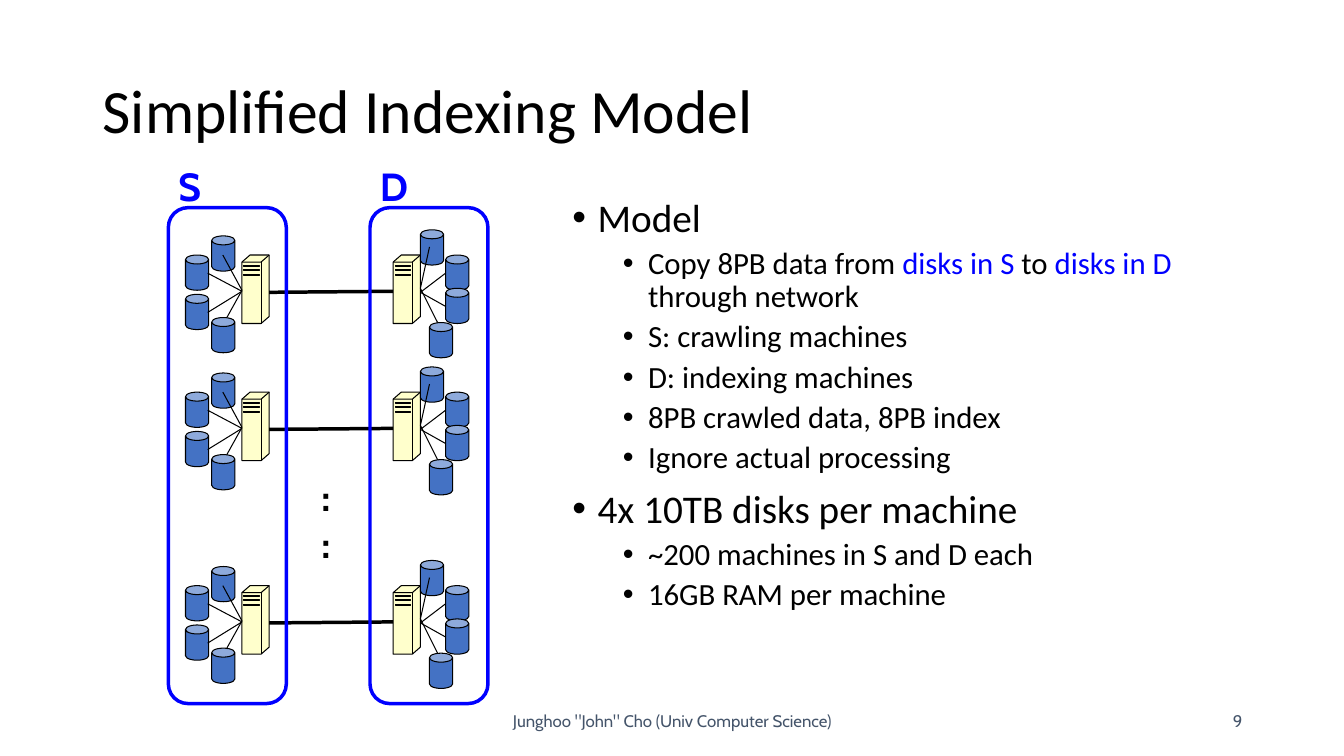
"""Build the slide on the simplified indexing model."""
from lxml.etree import SubElement
from pptx import Presentation
from pptx.dml.color import RGBColor
from pptx.enum.shapes import MSO_CONNECTOR, MSO_SHAPE
from pptx.enum.text import MSO_ANCHOR, PP_ALIGN
from pptx.oxml.ns import qn
from pptx.util import Inches, Pt

COLORS = {"text": "000000", "accent": "0000FF", "footer": "44546A",
          "disk": "4472C4", "server": "FFFFCC"}

TITLE = "Simplified Indexing Model"
FOOTER = 'Junghoo "John" Cho (Univ Computer Science)'
PAGE = "9"
OUTLINE = [
    (0, [("Model", "text")]),
    (1, [("Copy 8PB data from ", "text"), ("disks in S", "accent"), (" to ", "text"),
         ("disks in D", "accent"), (" through network", "text")]),
    (1, [("S: crawling machines", "text")]),
    (1, [("D: indexing machines", "text")]),
    (1, [("8PB crawled data, 8PB index", "text")]),
    (1, [("Ignore actual processing", "text")]),
    (0, [("4x 10TB disks per machine", "text")]),
    (1, [("~200 machines in S and D each", "text")]),
    (1, [("16GB RAM per machine", "text")]),
]
LEVELS = [{"size": 28, "margin": 0.25, "before": 10},
          {"size": 22, "margin": 0.75, "before": 5}]

ROW_TOPS = [2.53, 3.89, 5.81]
SERVER_LEFTS = {"S": 2.4, "D": 3.9}
SERVER_WIDTH, SERVER_HEIGHT = 0.27, 0.68
FRONT_WIDTH, FRONT_TOP = 0.19, 0.07
SERVER_OUTLINE = [(0, FRONT_TOP), (0.08, 0), (SERVER_WIDTH, 0), (SERVER_WIDTH, 0.61),
                  (FRONT_WIDTH, SERVER_HEIGHT), (0, SERVER_HEIGHT)]
SERVER_EDGES = [[(0, FRONT_TOP), (FRONT_WIDTH, FRONT_TOP), (SERVER_WIDTH, 0)],
                [(FRONT_WIDTH, FRONT_TOP), (FRONT_WIDTH, SERVER_HEIGHT)]]
SLOTS = [[(0.02, y), (0.17, y), (0.17, y + 0.01), (0.02, y + 0.01), (0.02, y)]
         for y in (0.1, 0.14, 0.19)]

DISKS = {"S": [(1.84, 0), (1.84, 0.39), (2.1, 0.62), (2.1, -0.19)],
         "D": [(4.42, 0), (4.42, 0.33), (4.26, 0.67), (4.17, -0.25)]}
CABLES = {
    "S": [(2.4, 0.36, 2.06, 0.18), (2.4, 0.36, 2.06, 0.57),
          (2.4, 0.35, 2.21, 0), (2.4, 0.35, 2.25, 0.62)],
    "D": [(4.17, 0.37, 4.42, 0.18), (4.17, 0.37, 4.42, 0.51),
          (4.17, 0.33, 4.26, -0.08), (4.17, 0.33, 4.34, 0.67)],
}
NETWORK = (2.67, 0.37, 3.9, 0.36)
CLUSTERS = [("S", 1.67, 0.44), ("D", 3.67, 0.52)]


def rgb(name):
    return RGBColor.from_string(COLORS[name])


def style(shape, fill, line, weight):
    shape.shadow.inherit = False
    if fill:
        shape.fill.solid()
        shape.fill.fore_color.rgb = rgb(fill)
    else:
        shape.fill.background()
    shape.line.color.rgb = rgb(line)
    shape.line.width = Pt(weight)


def add_run(paragraph, text, size, font, color, bold=False):
    run = paragraph.add_run()
    run.text = text
    run.font.size, run.font.name, run.font.bold = Pt(size), font, bold
    run.font.color.rgb = rgb(color)


def add_frame(slide, box, anchor=MSO_ANCHOR.TOP, wrap=True):
    frame = slide.shapes.add_textbox(*map(Inches, box)).text_frame
    frame.word_wrap, frame.vertical_anchor = wrap, anchor
    return frame


def add_lines(slide, box, lines, size, font, color, bold=False, wrap=True,
              anchor=MSO_ANCHOR.TOP, align=PP_ALIGN.LEFT, spacing=1.0):
    frame = add_frame(slide, box, anchor, wrap)
    for index, line in enumerate(lines):
        paragraph = frame.add_paragraph() if index else frame.paragraphs[0]
        paragraph.alignment, paragraph.line_spacing = align, spacing
        add_run(paragraph, line, size, font, color, bold)


def add_outline(slide):
    frame = add_frame(slide, (5.58, 1.92, 7.07, 4.82))
    for index, (level, runs) in enumerate(OUTLINE):
        paragraph = frame.add_paragraph() if index else frame.paragraphs[0]
        look = LEVELS[level]
        paragraph.level, paragraph.line_spacing = level, 0.9
        paragraph.space_before = Pt(look["before"])
        properties = paragraph._p.get_or_add_pPr()
        properties.set("marL", str(Inches(look["margin"])))
        properties.set("indent", str(Inches(-0.25)))
        SubElement(properties, qn("a:buFont")).set("typeface", "Arial")
        SubElement(properties, qn("a:buChar")).set("char", "•")
        for text, color in runs:
            add_run(paragraph, text, look["size"], "Calibri", color)


def add_wire(shapes, wire, top, weight):
    x1, y1, x2, y2 = wire
    ends = map(Inches, (x1, top + y1, x2, top + y2))
    connector = shapes.add_connector(MSO_CONNECTOR.STRAIGHT, *ends)
    connector.line.color.rgb = rgb("text")
    connector.line.width = Pt(weight)
    SubElement(connector._element.spPr, qn("a:effectLst"))


def add_contours(shapes, left, top, contours, fill, close):
    placed = [[(Inches(left + x), Inches(top + y)) for x, y in contour]
              for contour in contours]
    builder = shapes.build_freeform(*placed[0][0])
    builder.add_line_segments(placed[0][1:], close=close)
    for contour in placed[1:]:
        builder.move_to(*contour[0])
        builder.add_line_segments(contour[1:], close=close)
    style(builder.convert_to_shape(), fill, "text", 0.75)


def add_machine(shapes, side, top):
    left = SERVER_LEFTS[side]
    add_contours(shapes, left, top, [SERVER_OUTLINE], "server", True)
    add_contours(shapes, left, top, SERVER_EDGES + SLOTS, None, False)
    for x, y in DISKS[side]:
        box = map(Inches, (x, top + y, 0.23, 0.35))
        disk = shapes.add_shape(MSO_SHAPE.CAN, *box)
        disk.adjustments[0] = 0.388
        style(disk, "disk", "text", 0.75)
    for cable in CABLES[side]:
        add_wire(shapes, cable, top, 0.75)


def main():
    deck = Presentation()
    deck.slide_width, deck.slide_height = Inches(13.33), Inches(7.5)
    slide = deck.slides.add_slide(deck.slide_layouts[6])

    add_lines(slide, (4.42, 6.95, 4.5, 0.4), [FOOTER], 12, "Cabin", "footer",
              anchor=MSO_ANCHOR.MIDDLE, align=PP_ALIGN.CENTER)
    add_lines(slide, (9.42, 6.95, 3, 0.4), [PAGE], 12, "Cabin", "footer",
              anchor=MSO_ANCHOR.MIDDLE, align=PP_ALIGN.RIGHT)
    add_lines(slide, (0.92, 0.4, 11.5, 1.45), [TITLE], 44, "Calibri", "text",
              anchor=MSO_ANCHOR.MIDDLE, spacing=0.9)
    add_outline(slide)

    for top in ROW_TOPS:
        pair = slide.shapes.add_group_shape().shapes
        for side in SERVER_LEFTS:
            add_machine(pair, side, top)
        add_wire(pair, NETWORK, top, 2.5)

    add_lines(slide, (3.09, 4.64, 0.31, 1.04), [":", ":"], 28, "Cabin", "text",
              bold=True, wrap=False)
    for label, left, label_width in CLUSTERS:
        box = map(Inches, (left, 2.06, 1.17, 4.92))
        cluster = slide.shapes.add_shape(MSO_SHAPE.ROUNDED_RECTANGLE, *box)
        style(cluster, None, "accent", 2.5)
        add_lines(slide, (left, 1.56, label_width, 0.57), [label], 28, "Cabin",
                  "accent", bold=True, wrap=False)

    deck.save("out.pptx")


if __name__ == "__main__":
    main()
